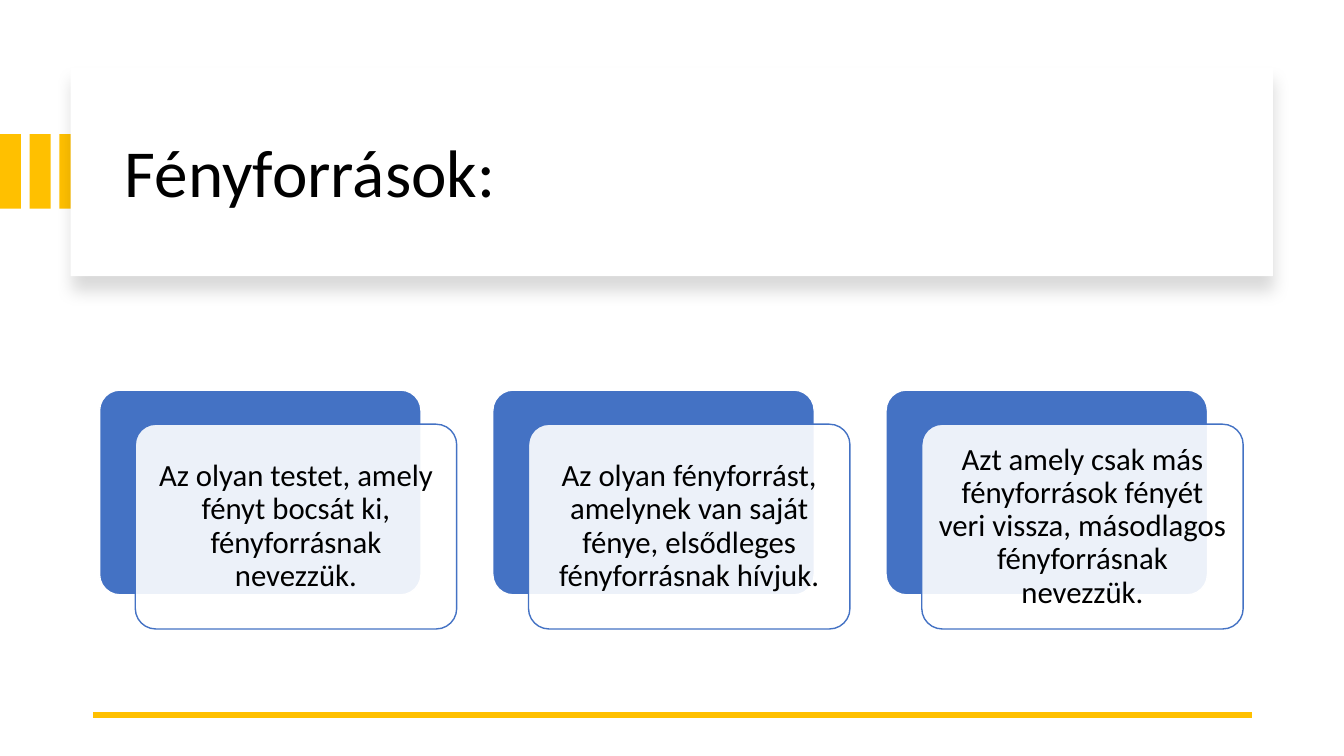
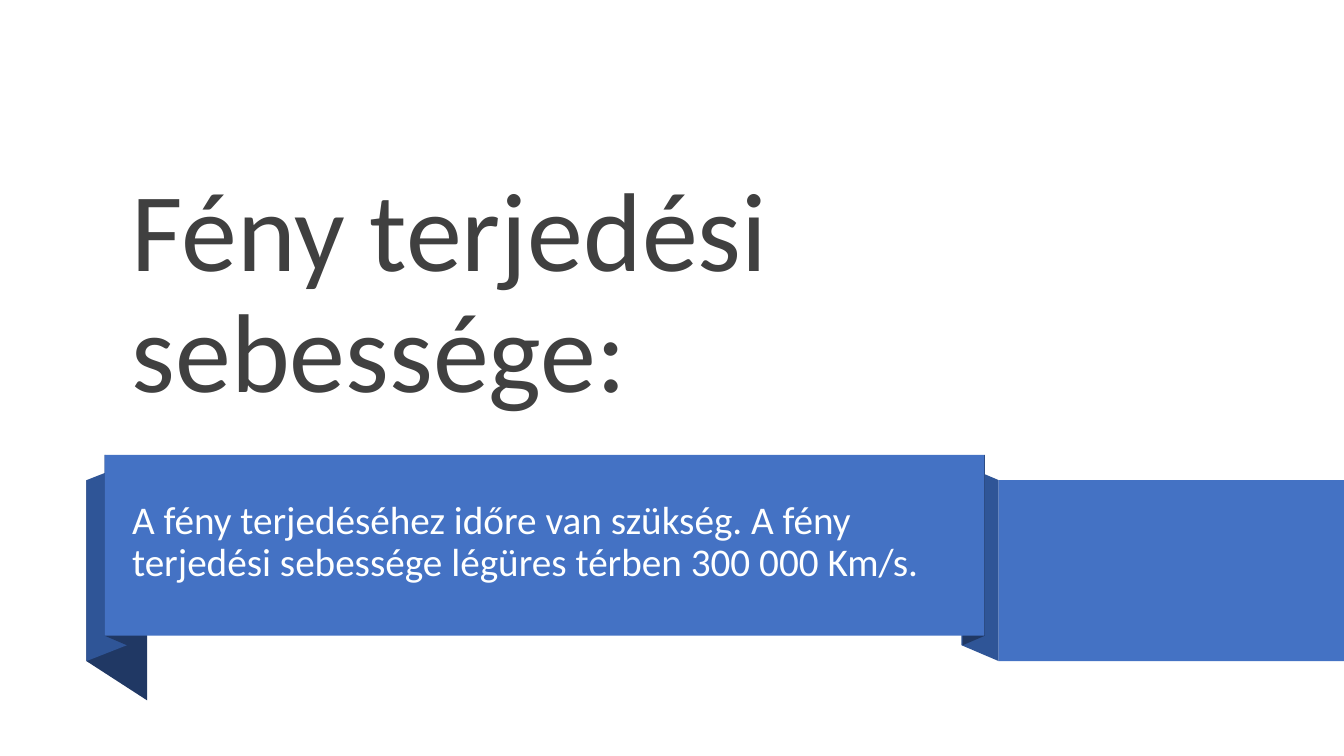
import lxml.etree
import pptx
import pptx.dml.color
import pptx.enum.shapes
import pptx.enum.text
import pptx.oxml
import pptx.oxml.ns
import pptx.util

Cm = pptx.util.Cm
Pt = pptx.util.Pt
RGB = pptx.dml.color.RGBColor.from_string
ALIGN = pptx.enum.text.PP_ALIGN
ANCHOR = pptx.enum.text.MSO_ANCHOR
SHAPE = pptx.enum.shapes.MSO_SHAPE
qn = pptx.oxml.ns.qn

COLORS = {
    "gold": "FFC000",
    "blue": "4472C4",
    "mid": "2F5597",
    "navy": "203864",
    "white": "FFFFFF",
    "banner_text": "FEFFFF",
    "black": "000000",
    "gray": "404040",
}


def write(shape, text, size, color, align=ALIGN.LEFT, anchor=ANCHOR.MIDDLE, insets=(0.25, 0.13, 0.25, 0.13)):
    frame = shape.text_frame
    frame.word_wrap = True
    frame.auto_size = pptx.enum.text.MSO_AUTO_SIZE.NONE
    frame.vertical_anchor = anchor
    frame.margin_left, frame.margin_top, frame.margin_right, frame.margin_bottom = map(Cm, insets)
    frame.text = text
    paragraph = frame.paragraphs[0]
    paragraph.alignment = align
    paragraph.line_spacing = 0.9
    font = paragraph.runs[0].font
    font.name = "Calibri"
    font.size = Pt(size)
    font.color.rgb = RGB(COLORS[color])


def paint(shape, fill, line=None):
    shape.shadow.inherit = False
    shape.fill.solid()
    shape.fill.fore_color.rgb = RGB(COLORS[fill])
    if line:
        shape.line.color.rgb = RGB(COLORS[line])
        shape.line.width = Pt(1)
    else:
        shape.line.fill.background()
    return shape


deck = pptx.Presentation()
deck.slide_width = Cm(33.87)
deck.slide_height = Cm(19.05)
title_only = deck.slide_layouts[5]

sources = deck.slides.add_slide(title_only)
for index in range(3):
    stripe = sources.shapes.add_shape(SHAPE.RECTANGLE, Cm(0.75 * index), Cm(3.38), Cm(0.53), Cm(1.88))
    paint(stripe, "gold")

title_panel = paint(sources.shapes.add_shape(SHAPE.RECTANGLE, Cm(1.78), Cm(1.7), Cm(30.3), Cm(5.26)), "white")
effects = title_panel.element.spPr.find(qn("a:effectLst"))
shadow = lxml.etree.SubElement(
    effects, qn("a:outerShdw"), blurRad=str(Pt(11)), dist=str(Pt(10)), dir="5400000", algn="t", rotWithShape="0"
)
shadow_color = lxml.etree.SubElement(shadow, qn("a:srgbClr"), val=COLORS["black"])
lxml.etree.SubElement(shadow_color, qn("a:alpha"), val="15000")

sources_title = sources.shapes.title
sources_title.left, sources_title.top = Cm(2.9), Cm(2.26)
sources_title.width, sources_title.height = Cm(28.27), Cm(4.32)
write(sources_title, "Fényforrások:", size=48, color="black")
title_panel.element.addnext(sources_title.element)

baseline = sources.shapes.add_connector(
    pptx.enum.shapes.MSO_CONNECTOR.STRAIGHT, Cm(31.55), Cm(18.01), Cm(2.34), Cm(18.01)
)
baseline.line.color.rgb = RGB(COLORS["gold"])
baseline.line.width = Pt(4.5)
lxml.etree.SubElement(baseline.element.spPr, qn("a:effectLst"))

DEFINITIONS = [
    "Az olyan testet, amely fényt bocsát ki, fényforrásnak nevezzük.",
    "Az olyan fényforrást, amelynek van saját fénye, elsődleges fényforrásnak hívjuk.",
    "Azt amely csak más fényforrások fényét veri vissza, másodlagos fényforrásnak nevezzük.",
]
for index, definition in enumerate(DEFINITIONS):
    left = 2.51 + 9.91 * index
    backing = sources.shapes.add_shape(SHAPE.ROUNDED_RECTANGLE, Cm(left), Cm(9.83), Cm(8.1), Cm(5.16))
    paint(backing, "blue", "white")
    card = sources.shapes.add_shape(SHAPE.ROUNDED_RECTANGLE, Cm(left + 0.9), Cm(10.69), Cm(8.1), Cm(5.16))
    paint(card, "white", "blue")
    backing.adjustments[0] = card.adjustments[0] = 0.1
    card_color = card.element.spPr.find(qn("a:solidFill"))[0]
    lxml.etree.SubElement(card_color, qn("a:alpha"), val="90000")
    write(card, definition, size=22, color="black", align=ALIGN.CENTER, insets=(0.23, 0.23, 0.23, 0.23))

speed = deck.slides.add_slide(title_only)
speed_title = speed.shapes.title
speed_title.left, speed_title.top = Cm(3.07), Cm(1.78)
speed_title.width, speed_title.height = Cm(21.28), Cm(8.86)
write(speed_title, "Fény terjedési sebessége:", size=80, color="gray", anchor=ANCHOR.BOTTOM)

BAND_HEIGHT = 4.56
RIBBON_FOLDS = [
    (2.18, 12.1, 3.71, 13.09, "navy"),
    (2.18, 12.1, 3.2, 11.7, "mid"),
    (2.64, 11.46, 3.2, 11.7, "navy"),
    (25.17, 12.1, 24.23, 11.7, "mid"),
    (24.82, 11.46, 24.26, 11.7, "navy"),
]
for x1, y1, x2, y2, color in RIBBON_FOLDS:
    outline = speed.shapes.build_freeform(Cm(x1), Cm(y1))
    corners = [(x2, y2), (x2, y2 + BAND_HEIGHT), (x1, y1 + BAND_HEIGHT)]
    outline.add_line_segments([(Cm(x), Cm(y)) for x, y in corners])
    paint(outline.convert_to_shape(), color)

banner = speed.shapes.add_shape(SHAPE.RECTANGLE, Cm(2.64), Cm(11.46), Cm(22.17), Cm(BAND_HEIGHT))
paint(banner, "blue")
write(
    banner,
    "A fény terjedéséhez időre van szükség. A fény terjedési sebessége légüres térben 300 000 Km/s.",
    size=28,
    color="banner_text",
    insets=(0.69, 0.13, 0.69, 0.25),
)
ribbon_end = speed.shapes.add_shape(SHAPE.RECTANGLE, Cm(25.17), Cm(12.1), Cm(8.7), Cm(BAND_HEIGHT))
paint(ribbon_end, "blue")

deck.save("out.pptx")
